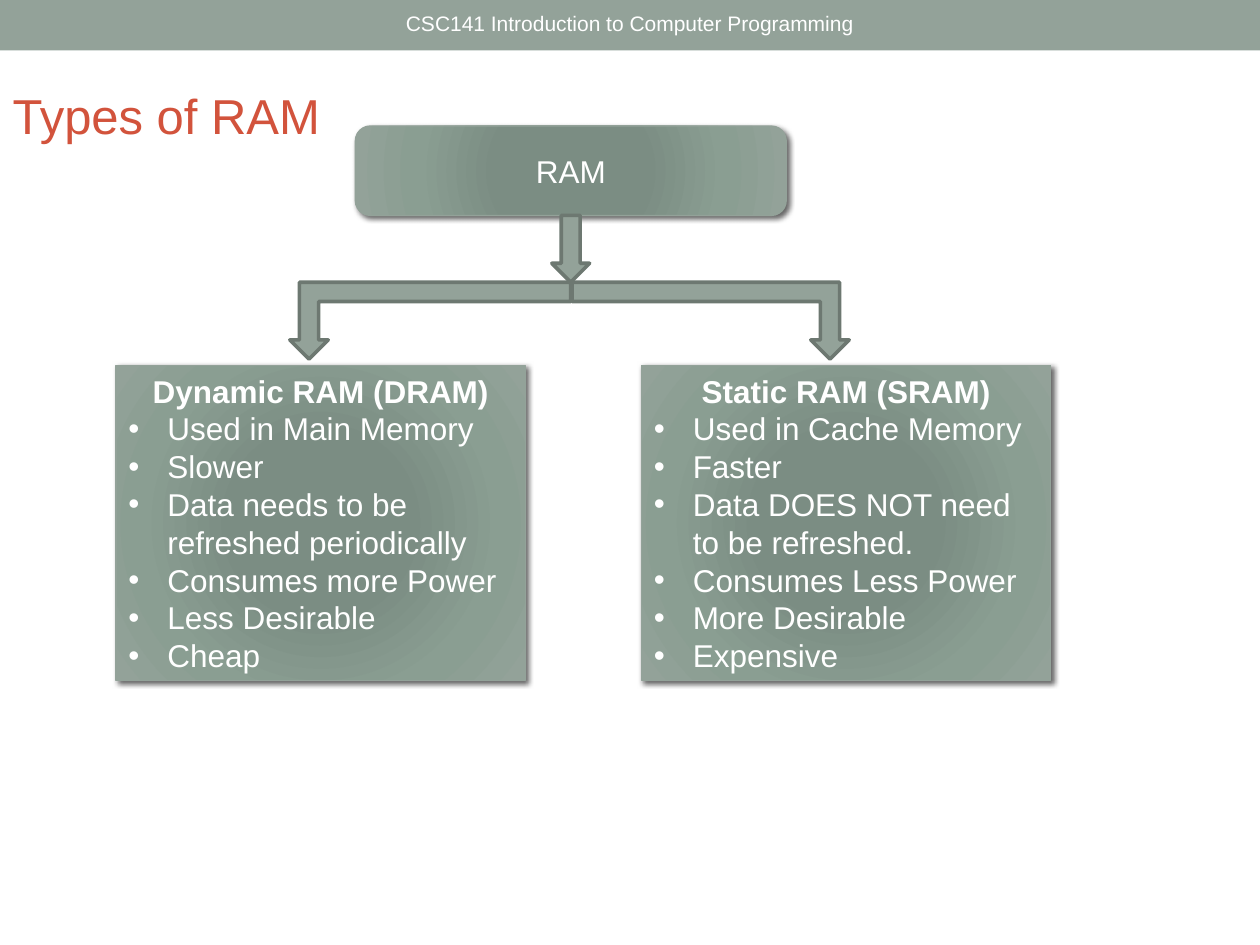
from pptx import Presentation
from pptx.dml.color import RGBColor
from pptx.enum.shapes import MSO_SHAPE
from pptx.enum.text import MSO_ANCHOR, PP_ALIGN
from pptx.oxml import parse_xml
from pptx.oxml.ns import nsdecls, qn
from pptx.util import Inches, Pt

RECTANGLE = MSO_SHAPE.RECTANGLE
ROUNDED = MSO_SHAPE.ROUNDED_RECTANGLE
DOWN_ARROW = MSO_SHAPE.DOWN_ARROW
BENT_ARROW = MSO_SHAPE.BENT_UP_ARROW
TOP, MIDDLE = MSO_ANCHOR.TOP, MSO_ANCHOR.MIDDLE
LEFT, CENTER = PP_ALIGN.LEFT, PP_ALIGN.CENTER
TITLE_ONLY = 5


def color(value):
    return RGBColor.from_string(value)


class RamPage:
    """Style and drawing methods for the RAM slide."""

    font = "Arial"
    sage, outline, white, red = "93A299", "6D7871", "FFFFFF", "D2533C"
    gradient = ((0, "7B8E82"), (34, "7B8D83"), (70, "8A9E92"), (100, "93A299"))

    def __init__(self, deck):
        self.page = deck.slides.add_slide(deck.slide_layouts[TITLE_ONLY])

    def add_text(self, para, text, size, ink=white, bold=False, align=CENTER):
        para.alignment = align
        span = para.add_run()
        span.text = text
        span.font.name = self.font
        span.font.size = Pt(size)
        span.font.bold = bold
        span.font.color.rgb = color(ink)

    def frame(self, box, anchor=MIDDLE):
        box.text_frame.word_wrap = True
        box.text_frame.vertical_anchor = anchor
        return box.text_frame

    def title(self, text, *place):
        box = self.page.shapes.title
        box.left, box.top, box.width, box.height = map(Inches, place)
        para = self.frame(box, TOP).paragraphs[0]
        self.add_text(para, text, 28, self.red, align=LEFT)

    def label(self, text, *place):
        box = self.page.shapes.add_textbox(*map(Inches, place))
        self.add_text(self.frame(box).paragraphs[0], text, 12)

    def shape(self, kind, *place, line=None, width=0.75):
        box = self.page.shapes.add_shape(kind, *map(Inches, place))
        box.shadow.inherit = False
        box.fill.solid()
        box.fill.fore_color.rgb = color(self.sage)
        if line:
            box.line.color.rgb = color(line)
            box.line.width = Pt(width)
        else:
            box.line.fill.background()
        return box

    def arrow(self, kind, *place, turn=0, mirror=False):
        box = self.shape(kind, *place, line=self.outline, width=2.08)
        box.rotation = turn
        if mirror:
            box._element.spPr.find(qn("a:xfrm")).set("flipH", "1")

    def card(self, kind, heading, items, *place):
        box = self.shape(kind, *place, line=self.sage)
        self.shade(box._element.spPr)
        frame = self.frame(box)
        self.add_text(frame.paragraphs[0], heading, 18, bold=bool(items))
        for item in items:
            para = frame.add_paragraph()
            self.bullet(para)
            self.add_text(para, item, 18, align=LEFT)

    def shade(self, properties):
        stops = "".join(
            f'<a:gs pos="{place * 1000}"><a:srgbClr val="{value}"/></a:gs>'
            for place, value in self.gradient
        )
        sides = " ".join(f'{side}="100000"' for side in "ltrb")
        fill = parse_xml(
            f'<a:gradFill {nsdecls("a")} rotWithShape="1"><a:gsLst>{stops}</a:gsLst>'
            f'<a:path path="circle"><a:fillToRect {sides}/></a:path></a:gradFill>'
        )
        properties.replace(properties.find(qn("a:solidFill")), fill)
        shadow = parse_xml(
            f'<a:outerShdw {nsdecls("a")} blurRad="{Pt(3)}" dist="{Pt(2)}" dir="2700000" '
            'algn="br" rotWithShape="0"><a:srgbClr val="000000">'
            '<a:alpha val="60000"/></a:srgbClr></a:outerShdw>'
        )
        properties.find(qn("a:effectLst")).append(shadow)

    def bullet(self, para):
        properties = para._p.get_or_add_pPr()
        properties.set("marL", str(Inches(0.31)))
        properties.set("indent", str(-Inches(0.31)))
        properties.append(parse_xml(f'<a:buFont {nsdecls("a")} typeface="{self.font}"/>'))
        properties.append(parse_xml(f'<a:buChar {nsdecls("a")} char="•"/>'))


def main():
    deck = Presentation()
    deck.slide_width, deck.slide_height = Inches(10), Inches(7.5)
    page = RamPage(deck)
    page.shape(RECTANGLE, 0, 0, 10, 0.4)
    page.label("CSC141 Introduction to Computer Programming", 2.75, 0, 4.5, 0.36)
    page.title("Types of RAM", 0, 0.63, 2.82, 0.57)

    dynamic = (
        "Used in Main Memory", "Slower", "Data needs to be refreshed periodically",
        "Consumes more Power", "Less Desirable", "Cheap",
    )
    static = (
        "Used in Cache Memory", "Faster", "Data DOES NOT need to be refreshed.",
        "Consumes Less Power", "More Desirable", "Expensive",
    )
    page.card(RECTANGLE, "Dynamic RAM (DRAM)", dynamic, 0.92, 2.9, 3.25, 2.5)
    page.card(RECTANGLE, "Static RAM (SRAM)", static, 5.09, 2.9, 3.25, 2.5)
    page.card(ROUNDED, "RAM", (), 2.82, 1, 3.42, 0.71)

    page.arrow(BENT_ARROW, 2.3, 2.24, 2.23, 0.61, turn=180)
    page.arrow(BENT_ARROW, 4.54, 2.24, 2.2, 0.61, turn=180, mirror=True)
    page.arrow(DOWN_ARROW, 4.38, 1.71, 0.3, 0.53)
    deck.save("out.pptx")


if __name__ == "__main__":
    main()
